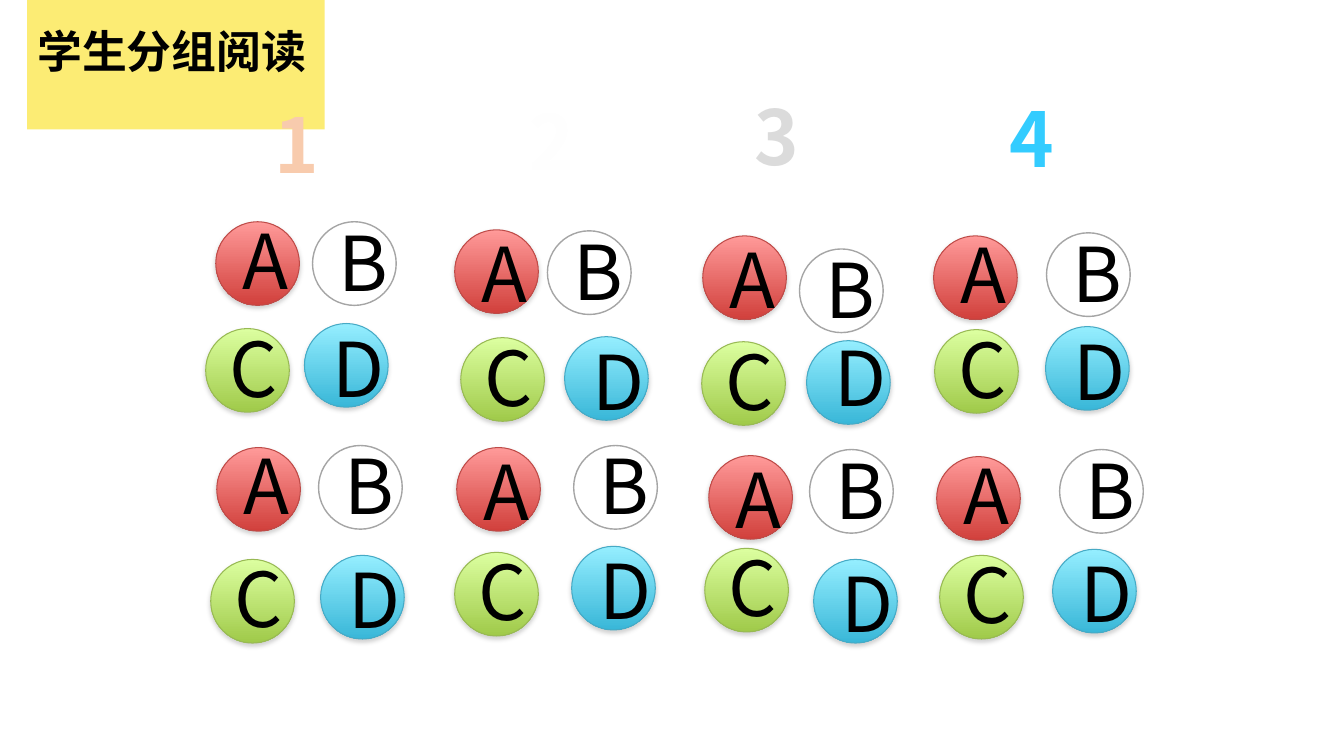
from dataclasses import dataclass

from lxml import etree
from pptx import Presentation
from pptx.dml.color import RGBColor
from pptx.enum.shapes import MSO_SHAPE
from pptx.enum.text import MSO_ANCHOR, MSO_AUTO_SIZE, PP_ALIGN
from pptx.util import Inches, Pt

OVAL = MSO_SHAPE.OVAL
MIDDLE = MSO_ANCHOR.MIDDLE
FIT = MSO_AUTO_SIZE.SHAPE_TO_FIT_TEXT
LEFT, CENTER = PP_ALIGN.LEFT, PP_ALIGN.CENTER
SPACE = "http://schemas.openxmlformats.org/drawingml/2006/main"


@dataclass(frozen=True)
class Theme:
    """Colours, fonts and sizes of the slide."""
    ink: str = "000000"
    band: str = "FCEC74"
    shade: str = "808080"
    face: str = "Noto Sans CJK SC"
    head: str = "Calibri"
    big: int = 54
    mid: int = 32
    disc: float = 0.83


@dataclass(frozen=True)
class Style:
    """Look of one letter: fill colours, line and text offset."""
    fill: tuple
    line: str
    width: float
    dx: float
    dy: float


THEME = Theme()
STYLES = {
    "A": Style(("FF9A99", "D1403C"), "BE4B48", 0.75, 0.17, -0.13),
    "B": Style(("FFFFFF",), "A5A5A5", 1, 0.16, -0.11),
    "C": Style(("DCFFA0", "A0CA4A"), "98B954", 0.75, 0.14, -0.12),
    "D": Style(("95EEFF", "39B7D8"), "46AAC5", 0.75, 0.18, -0.07),
}
TEAMS = [
    [(2.14, 2.2), (3.1, 2.2), (2.04, 3.26), (3.02, 3.21)],
    [(2.15, 4.44), (3.16, 4.42), (2.09, 5.55), (3.18, 5.51)],
    [(4.51, 2.28, 0.05), (5.43, 2.29), (4.57, 3.35), (5.6, 3.34)],
    [(4.53, 4.44, 0.05), (5.69, 4.42), (4.51, 5.48), (5.67, 5.42)],
    [(6.97, 2.34, 0.05), (7.93, 2.47), (6.96, 3.39), (8, 3.38, -0.08)],
    [(7.03, 4.52, 0.05), (8.03, 4.46), (6.99, 5.44), (8.07, 5.55)],
    [(9.26, 2.34), (10.38, 2.31), (9.27, 3.27), (10.37, 3.24)],
    [(9.29, 4.53), (10.51, 4.46), (9.32, 5.51), (10.44, 5.45)],
]
HEADS = [
    ("1", 2.62, 0.92, ("F8CBAD",), "ED7D31", 1.75),
    ("2", 5.15, 0.89, ("FEFEFE",), "5B9BD5", 0.75),
    ("3", 7.38, 0.84, ("A5A5A5", "DBDBDB"), "525252", 1),
    ("4", 9.91, 0.86, ("33CCFF",), "525252", 1),
]


def rgb(code):
    """Turn a hex code into a colour."""
    return RGBColor.from_string(code)


def node(root, tag, **attrs):
    """Append a drawing element to root."""
    return etree.SubElement(root, f"{{{SPACE}}}{tag}", attrs)


def tint(root, code):
    """Append a plain colour to root."""
    return node(root, "srgbClr", val=code)


def shadow(root, code, alpha, blur, dist, angle):
    """Append an outer shadow to an effect list."""
    cast = node(root, "outerShdw", blurRad=str(Pt(blur)), dist=str(Pt(dist)),
                dir=str(angle * 60000), rotWithShape="0")
    node(tint(cast, code), "alpha", val=str(alpha * 1000))


def letter(group, text, x, y):
    """Place one large letter in a narrow box."""
    box = group.shapes.add_textbox(Inches(x), Inches(y), Inches(0.49), Inches(1.01))
    box.text_frame.word_wrap = True
    box.text_frame.auto_size = FIT
    para = box.text_frame.paragraphs[0]
    para.text = text
    para.alignment = CENTER
    para.font.size, para.font.name = Pt(THEME.big), THEME.face
    para.font.color.rgb = rgb(THEME.ink)


def badge(slide, text, x, y, shift=0):
    """Draw a disc with its letter, shifted down if asked."""
    style = STYLES[text]
    group = slide.shapes.add_group_shape()
    size = Inches(THEME.disc)
    disc = group.shapes.add_shape(OVAL, Inches(x), Inches(y), size, size)
    disc.shadow.inherit = False
    disc.line.color.rgb = rgb(style.line)
    disc.line.width = Pt(style.width)
    if len(style.fill) == 1:
        disc.fill.solid()
        disc.fill.fore_color.rgb = rgb(style.fill[0])
    else:
        disc.fill.gradient()
        disc.fill.gradient_angle = 270
        for stop, code in zip(disc.fill.gradient_stops, style.fill):
            stop.color.rgb = rgb(code)
        effect = disc._element.spPr.find(f"{{{SPACE}}}effectLst")
        shadow(effect, THEME.shade, 35, 3.1, 1.8, 90)
    letter(group, text, x + style.dx, y + style.dy + shift)


def team(slide, spots):
    """Draw the four lettered discs of one team."""
    for text, spot in zip(STYLES, spots):
        badge(slide, text, *spot)


def digit(slide, text, x, y, fill, line, width):
    """Draw an outlined group number."""
    box = slide.shapes.add_textbox(Inches(x), Inches(y), Inches(0.62), Inches(1.01))
    box.text_frame.word_wrap = False
    box.text_frame.auto_size = FIT
    para = box.text_frame.paragraphs[0]
    para.alignment = CENTER
    run = para.add_run()
    run.text = text
    run.font.size, run.font.bold = Pt(THEME.big), True
    props = run._r.get_or_add_rPr()
    edge = node(props, "ln", w=str(Pt(width)))
    tint(node(edge, "solidFill"), line)
    if len(fill) == 1:
        tint(node(props, "solidFill"), fill[0])
    else:
        weave = node(props, "pattFill", prst="narHorz")
        for tag, code in zip(("fgClr", "bgClr"), fill):
            tint(node(weave, tag), code)
    if text == "2":
        props.set("spc", "50")
        shadow(node(props, "effectLst"), line, 40, 1, 3, 45)
    run.font.name = THEME.face


def title(slide, text, x, y, wide, high):
    """Format the title placeholder as a yellow band."""
    band = slide.shapes.title
    band.left, band.top = Inches(x), Inches(y)
    band.width, band.height = Inches(wide), Inches(high)
    band.fill.solid()
    band.fill.fore_color.rgb = rgb(THEME.band)
    frame = band.text_frame
    frame.text = text
    frame.auto_size, frame.vertical_anchor = FIT, MIDDLE
    para = frame.paragraphs[0]
    para.alignment = LEFT
    para.font.size, para.font.bold = Pt(THEME.mid), True
    para.font.name = THEME.head
    para.font.color.rgb = rgb(THEME.ink)


def main():
    """Build and save the slide."""
    deck = Presentation()
    deck.slide_width, deck.slide_height = Inches(13.33), Inches(7.5)
    slide = deck.slides.add_slide(deck.slide_layouts[5])
    title(slide, "学生分组阅读", 0.27, 0.18, 2.95, 0.64)
    for spots in TEAMS:
        team(slide, spots)
    for head in HEADS:
        digit(slide, *head)
    deck.save("out.pptx")


if __name__ == "__main__":
    main()
